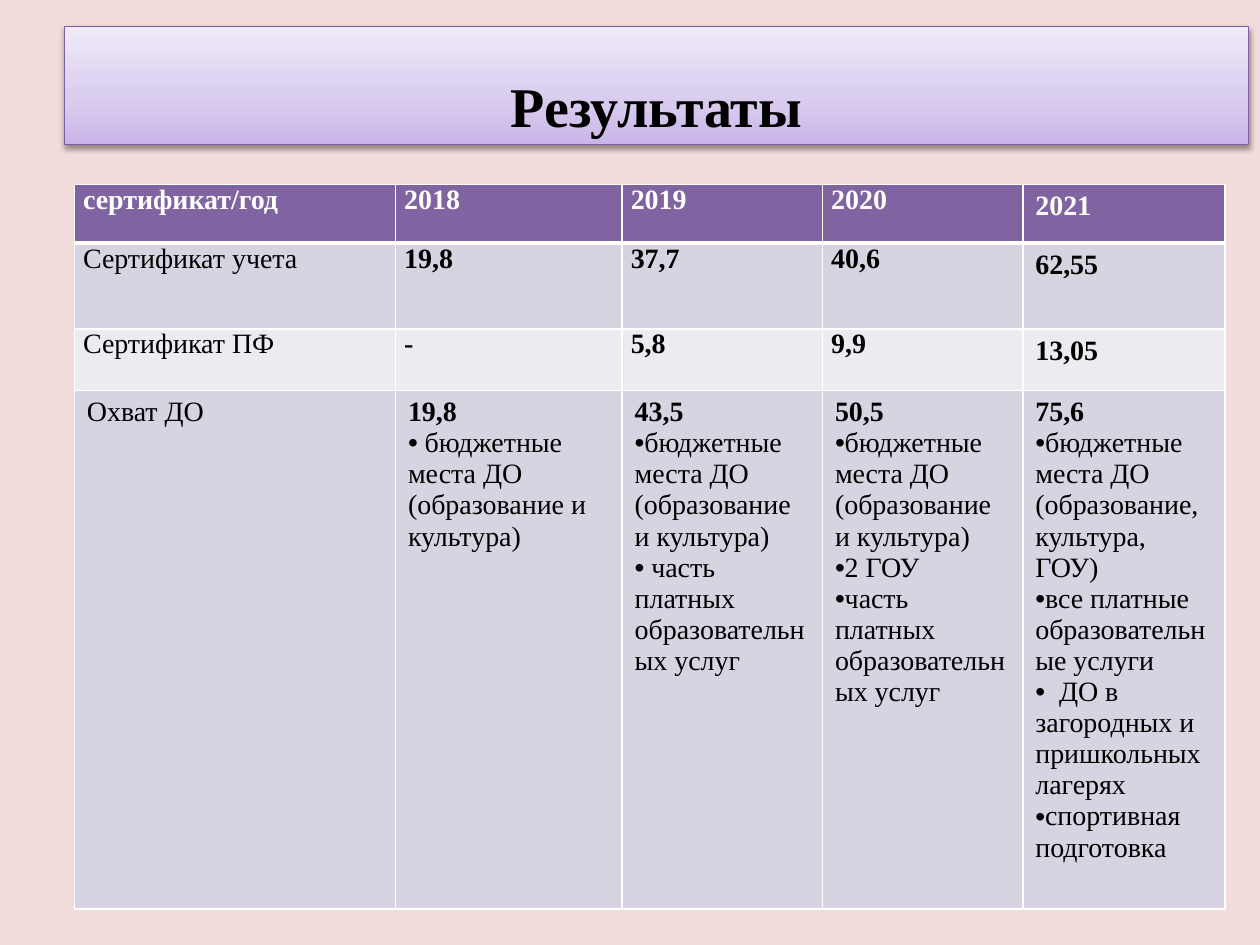
from lxml import etree
from pptx import Presentation
from pptx.dml.color import RGBColor
from pptx.enum.text import MSO_ANCHOR, PP_ALIGN
from pptx.oxml import parse_xml
from pptx.util import Pt

BOTTOM = MSO_ANCHOR.BOTTOM
CENTER = PP_ALIGN.CENTER
TITLE_ONLY = 5
FONT = "Times New Roman"
DRAWING = "http://schemas.openxmlformats.org/drawingml/2006/main"
COLORS = {
    "background": "F2DCDB", "text": "000000", "white": "FFFFFF",
    "title_line": "7D60A0", "header": "8064A2",
    "band_dark": "D8D3E0", "band_light": "EDEAF0",
}
TITLE_STOPS = [(0, "C9B5E8"), (35, "D8CBEE"), (100, "F0EAF9")]
TITLE_BOX = (36.7, 15.1, 676.8, 67.7)
TABLE_BOX = (42.5, 105.5, 657.5, 414)
COLUMN_WIDTHS = [183.5, 129.5, 114.5, 114.5, 115.5]
ROW_HEIGHTS = [33.4, 49, 35.2, 296.4]
ROW_FILLS = ["header", "band_dark", "band_light", "band_dark"]
PLACES = "бюджетные места ДО (образование и культура)"
PAID = "часть платных образовательных услуг"
ROWS = [
    [["сертификат/год"], ["2018"], ["2019"], ["2020"], ["2021"]],
    [["Сертификат учета"], ["19,8"], ["37,7"], ["40,6"], ["62,55"]],
    [["Сертификат ПФ"], ["-"], ["5,8"], ["9,9"], ["13,05"]],
    [
        ["Охват ДО"],
        ["19,8", " " + PLACES],
        ["43,5", PLACES, " " + PAID],
        ["50,5", PLACES, "2 ГОУ", PAID],
        ["75,6", "бюджетные места ДО (образование, культура, ГОУ)",
         "все платные образовательные услуги",
         "  ДО в загородных и пришкольных лагерях", "спортивная подготовка"],
    ],
]


def color(name):
    return RGBColor.from_string(COLORS[name])


def set_attributes(target, values):
    for name, value in values.items():
        setattr(target, name, value)


def format_font(font, size, color_name, bold):
    set_attributes(font, {"name": FONT, "size": Pt(size), "bold": bold})
    font.color.rgb = color(color_name)


def add_bullet(paragraph):
    properties = paragraph._p.get_or_add_pPr()
    properties.set("marL", "0")
    properties.set("indent", "0")
    etree.SubElement(properties, f"{{{DRAWING}}}buFont", typeface="Arial")
    etree.SubElement(properties, f"{{{DRAWING}}}buChar", char="•")


def set_borders(cell, widths):
    properties = cell._tc.get_or_add_tcPr()
    for side, width in widths.items():
        properties.append(parse_xml(
            f'<a:ln{side} xmlns:a="{DRAWING}" w="{Pt(width)}"><a:solidFill>'
            f'<a:srgbClr val="{COLORS["white"]}"/></a:solidFill></a:ln{side}>'))


def place_title(slide, box):
    title = slide.shapes.title
    left, top, width, height = map(Pt, box)
    set_attributes(title, {"left": left, "top": top, "width": width, "height": height})
    stops = "".join(f'<a:gs pos="{position * 1000}"><a:srgbClr val="{value}"/></a:gs>'
                    for position, value in TITLE_STOPS)
    properties = title._element.spPr
    properties.append(parse_xml(
        f'<a:prstGeom xmlns:a="{DRAWING}" prst="rect"><a:avLst/></a:prstGeom>'))
    properties.append(parse_xml(
        f'<a:gradFill xmlns:a="{DRAWING}" rotWithShape="1"><a:gsLst>{stops}</a:gsLst>'
        '<a:lin ang="16200000" scaled="0"/></a:gradFill>'))
    title.line.color.rgb = color("title_line")
    title.line.width = Pt(0.75)
    properties.append(parse_xml(
        f'<a:effectLst xmlns:a="{DRAWING}"><a:outerShdw blurRad="{Pt(3.1)}" '
        f'dist="{Pt(1.6)}" dir="5400000" rotWithShape="0">'
        f'<a:srgbClr val="{COLORS["text"]}"><a:alpha val="38000"/></a:srgbClr>'
        '</a:outerShdw></a:effectLst>'))
    frame = title.text_frame
    set_attributes(frame, {"text": "Результаты", "vertical_anchor": BOTTOM, "word_wrap": True})
    paragraph = frame.paragraphs[0]
    paragraph.alignment = CENTER
    format_font(paragraph.runs[0].font, 32, "text", True)


def fill_cell(cell, lines, row, column):
    compact = row < 3 and column < 4
    side, edge = (5, 0) if compact else (7.2, 3.6)
    set_attributes(cell, {"margin_left": Pt(side), "margin_right": Pt(side),
                          "margin_top": Pt(edge), "margin_bottom": Pt(edge)})
    set_borders(cell, {"L": 1, "R": 1, "T": 3 if row == 1 else 1, "B": 3 if row == 0 else 1})
    cell.fill.solid()
    cell.fill.fore_color.rgb = color(ROW_FILLS[row])
    cell.text = "\n".join(lines)
    for index, paragraph in enumerate(cell.text_frame.paragraphs):
        bold = index == 0 and (row == 0 or column > 0)
        format_font(paragraph.runs[0].font, 16, "white" if row == 0 else "text", bold)
        if index > 0:
            add_bullet(paragraph)


def place_table(slide, box):
    table = slide.shapes.add_table(len(ROWS), len(COLUMN_WIDTHS), *map(Pt, box)).table
    for column, width in zip(table.columns, COLUMN_WIDTHS):
        column.width = Pt(width)
    for row, height in zip(table.rows, ROW_HEIGHTS):
        row.height = Pt(height)
    for row, cells in enumerate(ROWS):
        for column, lines in enumerate(cells):
            fill_cell(table.cell(row, column), lines, row, column)


def main():
    presentation = Presentation()
    set_attributes(presentation, {"slide_width": Pt(720), "slide_height": Pt(540)})
    slide = presentation.slides.add_slide(presentation.slide_layouts[TITLE_ONLY])
    slide.background.fill.solid()
    slide.background.fill.fore_color.rgb = color("background")
    place_title(slide, TITLE_BOX)
    place_table(slide, TABLE_BOX)
    presentation.save("out.pptx")


if __name__ == "__main__":
    main()
